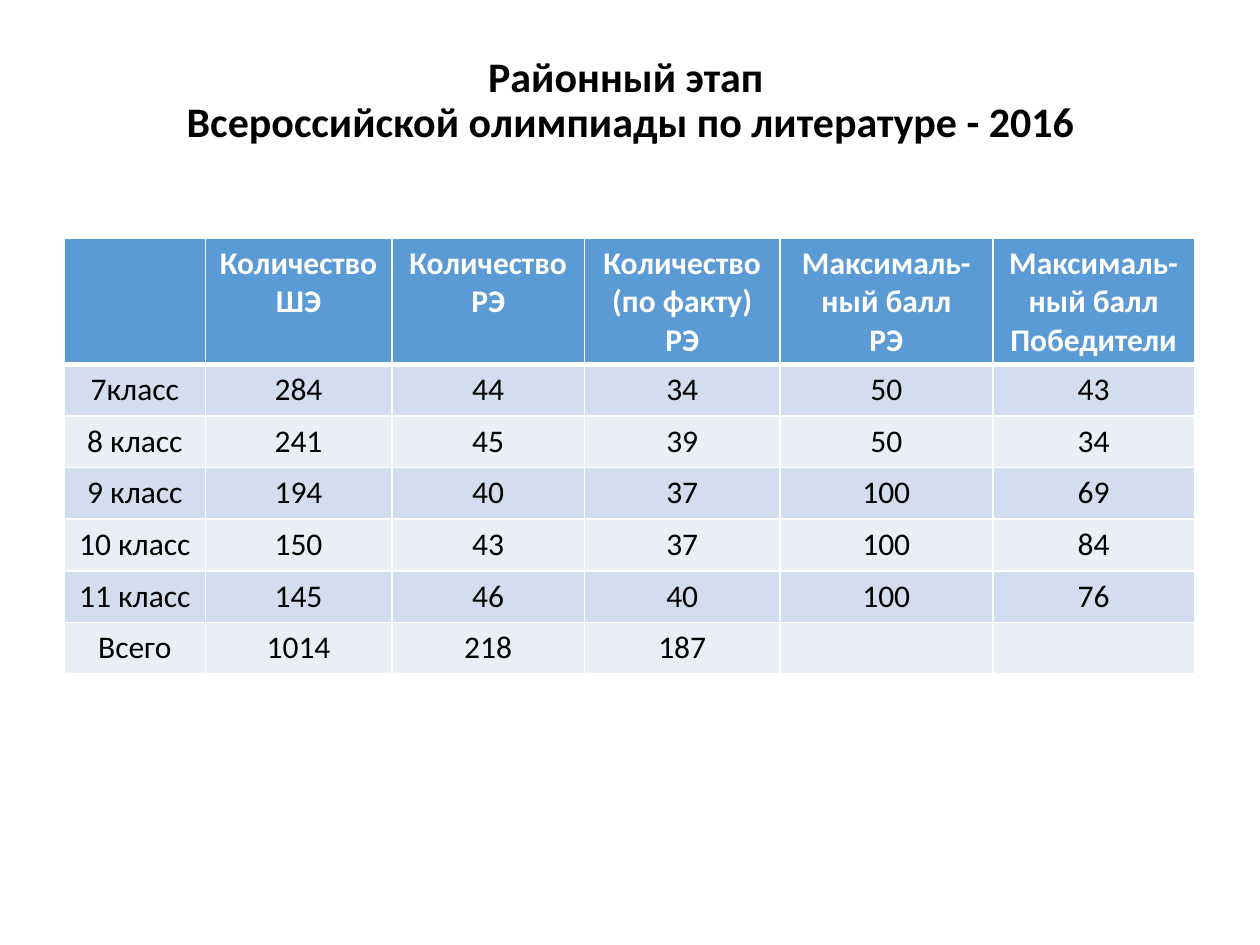
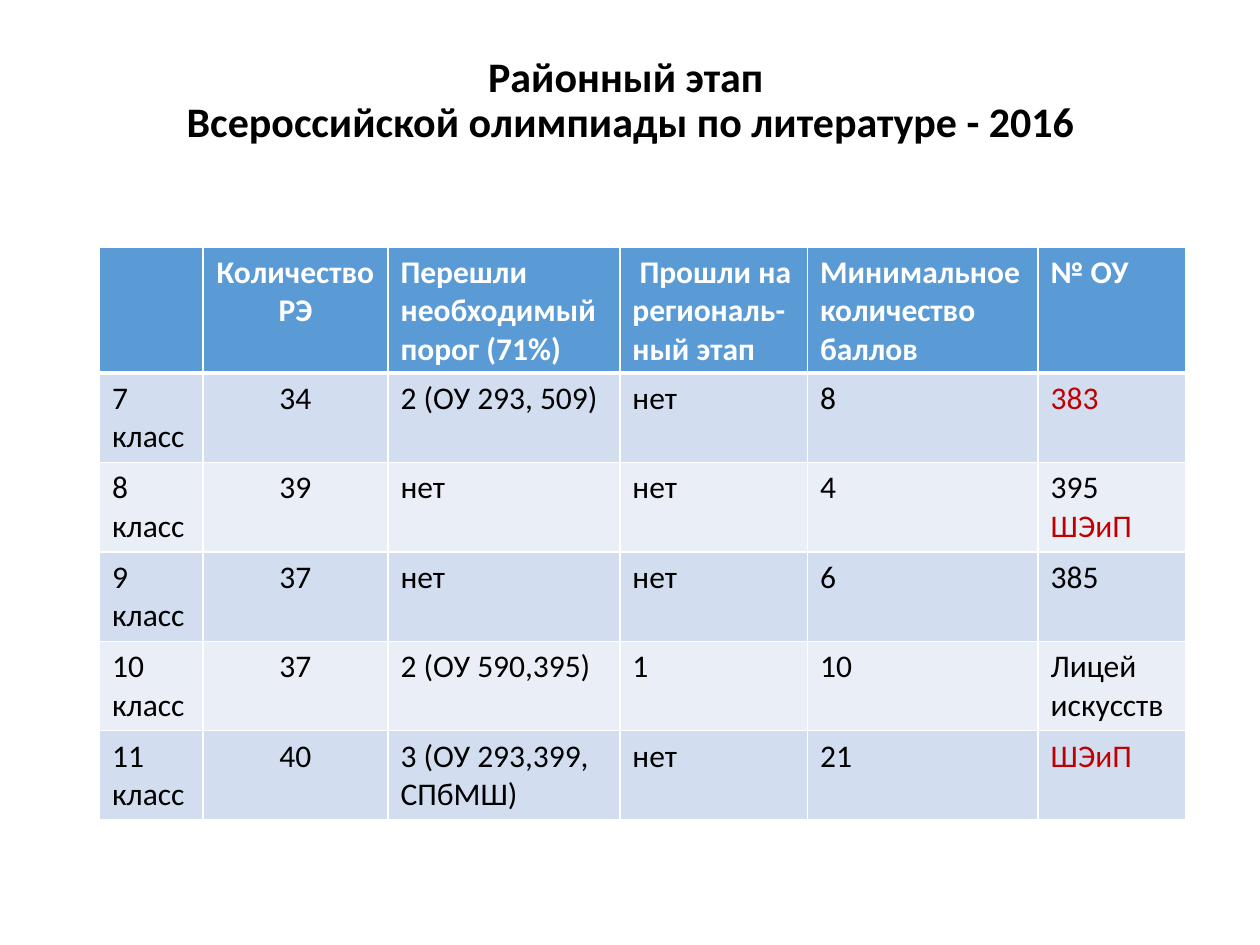
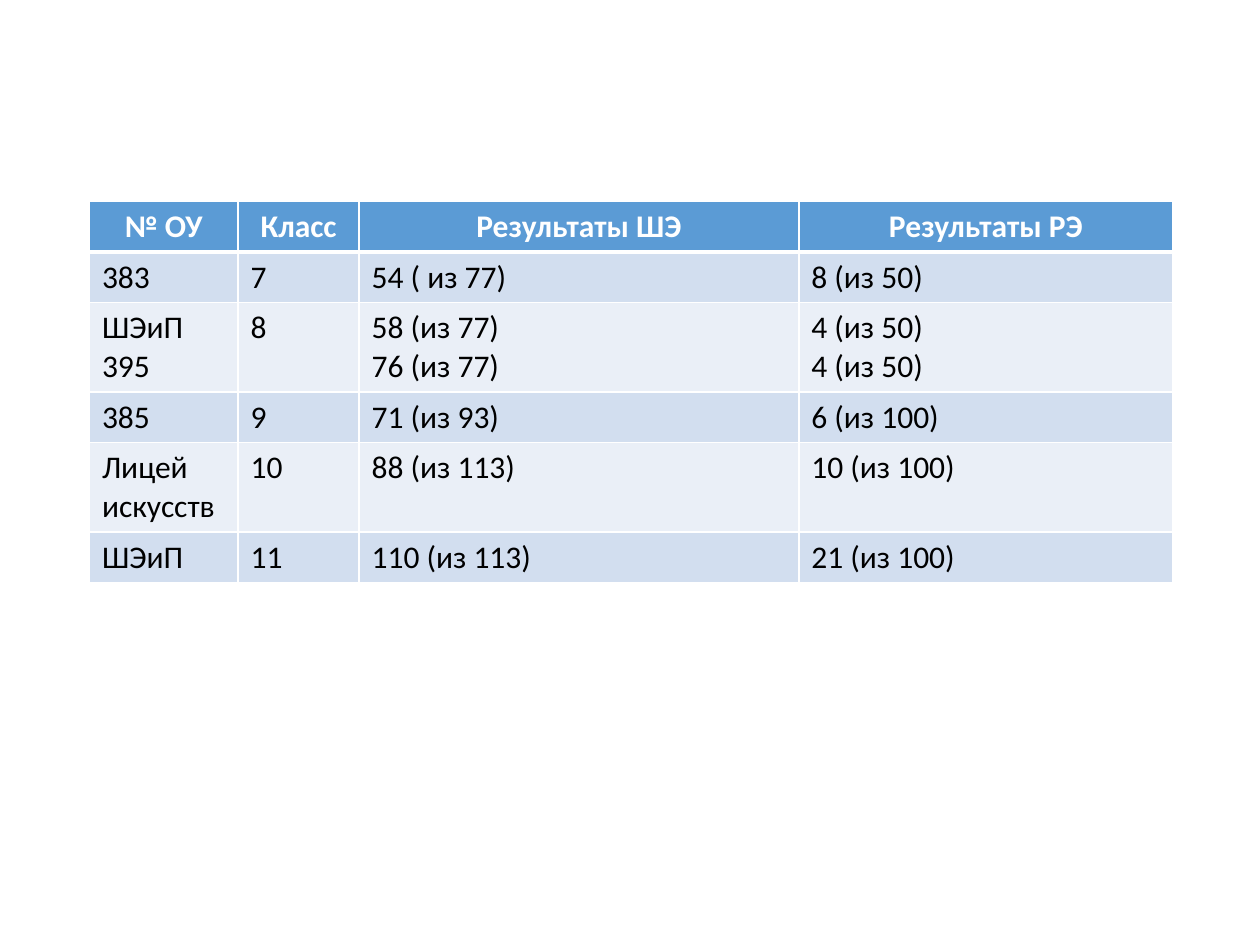
"""Builds three slides of tables with the results of a school literature olympiad."""
from dataclasses import dataclass

from lxml import etree
from pptx import Presentation
from pptx.dml.color import RGBColor
from pptx.enum.text import MSO_ANCHOR, PP_ALIGN
from pptx.oxml.ns import qn
from pptx.util import Inches, Pt

CENTER = PP_ALIGN.CENTER
LEFT = PP_ALIGN.LEFT
MIDDLE = MSO_ANCHOR.MIDDLE


@dataclass(frozen=True)
class Theme:
    font: str = "Calibri"
    title_size: int = 24
    table_size: int = 18
    text: str = "000000"
    accent: str = "C00000"
    header: str = "5B9BD5"
    odd_row: str = "D2DEEF"
    even_row: str = "EAEFF7"
    white: str = "FFFFFF"
    thin_line: int = 1
    thick_line: int = 3


THEME = Theme()
TITLE = "Районный этап \vВсероссийской олимпиады по литературе - 2016"

SLIDES = [
    {
        "title": TITLE,
        "position": (0.51, 1.89),
        "columns": [1.12, 1.48, 1.53, 1.55, 1.69, 1.6],
        "heights": [1.0] + [0.41] * 6,
        "centred_header": {0, 1, 2, 3, 4, 5},
        "centred_body": {0, 1, 2, 3, 4, 5},
        "accents": set(),
        "rows": [
            ["", "Количество\nШЭ", "Количество\nРЭ", "Количество\n(по факту)\nРЭ",
             "Максималь-ный балл\nРЭ", "Максималь-ный балл\nПобедители"],
            ["7класс", "284", "44", "34", "50", "43"],
            ["8 класс", "241", "45", "39", "50", "34"],
            ["9 класс", "194", "40", "37", "100", "69"],
            ["10 класс", "150", "43", "37", "100", "84"],
            ["11 класс", "145", "46", "40", "100", "76"],
            ["Всего", "1014", "218", "187", "", ""],
        ],
    },
    {
        "title": TITLE,
        "position": (0.79, 1.96),
        "columns": [0.82, 1.47, 1.84, 1.49, 1.83, 1.17],
        "heights": [1.0] + [0.71] * 5,
        "centred_header": {1},
        "centred_body": {1},
        "accents": {(1, 5, 0), (2, 5, 1), (5, 5, 0)},
        "rows": [
            ["", "Количество\nРЭ", "Перешли необходимый\nпорог (71%)",
             " Прошли на региональ-\nный этап", "Минимальное количество баллов", "№ ОУ"],
            ["7 класс", "34", "2 (ОУ 293, 509)", "нет", "8", "383"],
            ["8 класс", "39", "нет", "нет", "4", "395\nШЭиП"],
            ["9 класс", "37", "нет", "нет", "6", "385"],
            ["10 класс", "37", "2 (ОУ 590,395)", "1", "10", "Лицей искусств"],
            ["11 класс", "40", "3 (ОУ 293,399,\nСПбМШ)", "нет", "21", "ШЭиП"],
        ],
    },
    {
        "title": None,
        "position": (0.71, 1.6),
        "columns": [1.18, 0.96, 3.49, 2.97],
        "heights": [0.4, 0.4, 0.71, 0.4, 0.71, 0.4],
        "centred_header": {0, 1, 2, 3},
        "centred_body": set(),
        "accents": set(),
        "rows": [
            ["№ ОУ", "Класс", "Результаты ШЭ", "Результаты РЭ"],
            ["383", "7", "54 ( из 77)", "8 (из 50)"],
            ["ШЭиП\n395", "8", "58 (из 77)\n76 (из 77)", "4 (из 50)\n4 (из 50)"],
            ["385", "9", "71 (из 93)", "6 (из 100)"],
            ["Лицей искусств", "10", "88 (из 113)", "10 (из 100)"],
            ["ШЭиП", "11", "110 (из 113)", "21 (из 100)"],
        ],
    },
]


def format_paragraph(para, size, color, bold, alignment):
    para.alignment = alignment
    for span in para.runs:
        span.font.name = THEME.font
        span.font.size = Pt(size)
        span.font.bold = bold
        span.font.color.rgb = RGBColor.from_string(color)


def style_cell(cell, fill, top, bottom):
    properties = cell._tc.get_or_add_tcPr()
    widths = {"lnL": THEME.thin_line, "lnR": THEME.thin_line, "lnT": top, "lnB": bottom}
    for side, width in widths.items():
        line = etree.SubElement(properties, qn("a:" + side), w=str(Pt(width)))
        line_fill = etree.SubElement(line, qn("a:solidFill"))
        etree.SubElement(line_fill, qn("a:srgbClr"), val=THEME.white)
    cell.fill.solid()
    cell.fill.fore_color.rgb = RGBColor.from_string(fill)


deck = Presentation()
deck.slide_width = Inches(10)
deck.slide_height = Inches(7.5)
blank_layout = deck.slide_layouts[6]

for content in SLIDES:
    page = deck.slides.add_slide(blank_layout)

    if content["title"]:
        box = page.shapes.add_textbox(Inches(0.72), Inches(0.27), Inches(8.57), Inches(1.07))
        box.text_frame.word_wrap = True
        box.text_frame.vertical_anchor = MIDDLE
        title = box.text_frame.paragraphs[0]
        title.text = content["title"]
        title.line_spacing = 0.9
        format_paragraph(title, THEME.title_size, THEME.text, True, CENTER)

    rows, columns, heights = content["rows"], content["columns"], content["heights"]
    left, top = content["position"]
    table = page.shapes.add_table(
        len(rows), len(columns), Inches(left), Inches(top),
        Inches(sum(columns)), Inches(sum(heights)),
    ).table
    for column, width in zip(table.columns, columns):
        column.width = Inches(width)
    for row, height in zip(table.rows, heights):
        row.height = Inches(height)

    for row_index, row_texts in enumerate(rows):
        is_header = row_index == 0
        if is_header:
            fill, color, centred = THEME.header, THEME.white, content["centred_header"]
        else:
            fill = THEME.odd_row if row_index % 2 else THEME.even_row
            color, centred = THEME.text, content["centred_body"]
        top_line = THEME.thick_line if row_index == 1 else THEME.thin_line
        bottom_line = THEME.thick_line if is_header else THEME.thin_line

        for column_index, cell_text in enumerate(row_texts):
            cell = table.cell(row_index, column_index)
            style_cell(cell, fill, top_line, bottom_line)
            cell.text_frame.text = cell_text
            alignment = CENTER if column_index in centred else LEFT
            for line_index, para in enumerate(cell.text_frame.paragraphs):
                accented = (row_index, column_index, line_index) in content["accents"]
                para_color = THEME.accent if accented else color
                format_paragraph(para, THEME.table_size, para_color, is_header, alignment)

deck.save("out.pptx")
